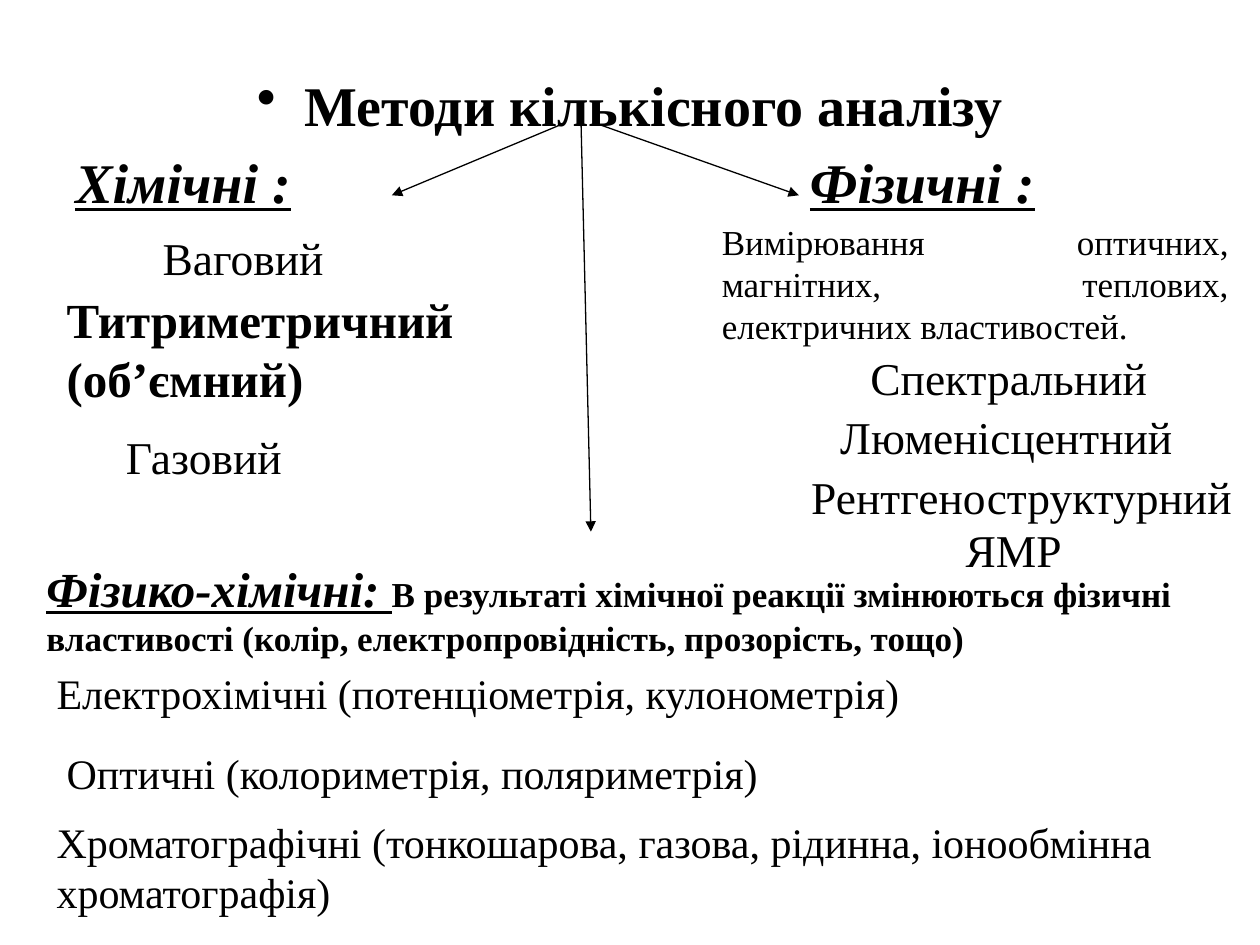
from lxml import etree
from pptx import Presentation
from pptx.dml.color import RGBColor
from pptx.enum import shapes, text
from pptx.oxml import ns
from pptx.util import Inches, Pt

COLORS = {"ink": "000000", "background": "FFFFFF"}
FONT = "Times New Roman"
ALIGN = text.PP_ALIGN
TITLE_ONLY = 5


class MethodsSlide:
    """Holds the style and the slide being built."""

    def __init__(self, presentation):
        self.slide = presentation.slides.add_slide(presentation.slide_layouts[TITLE_ONLY])
        self.ink = RGBColor.from_string(COLORS["ink"])
        fill = self.slide.background.fill
        fill.solid()
        fill.fore_color.rgb = RGBColor.from_string(COLORS["background"])

    def style(self, font, size, bold=False, italic=False, underline=False):
        font.name, font.size = FONT, Pt(size)
        font.bold, font.italic, font.underline = bold, italic, underline
        font.color.rgb = self.ink

    def title(self, words, left, top, width, height):
        """Fill the title placeholder as one centred, bulleted line."""
        shape = self.slide.shapes.title
        shape.left, shape.top = Inches(left), Inches(top)
        shape.width, shape.height = Inches(width), Inches(height)
        frame = shape.text_frame
        frame.text = words
        frame.vertical_anchor = text.MSO_ANCHOR.TOP
        frame.auto_size = text.MSO_AUTO_SIZE.NONE
        paragraph = frame.paragraphs[0]
        paragraph.alignment = ALIGN.CENTER
        paragraph.space_before = Pt(0)
        self.style(paragraph.font, 32, bold=True)
        properties = paragraph._p.get_or_add_pPr()
        properties.set("marL", str(Inches(0.38)))
        properties.set("indent", str(-Inches(0.38)))
        bullet = etree.Element(ns.qn("a:buChar"), char="•")
        properties.insert_element_before(bullet, "a:tabLst", "a:defRPr", "a:extLst")

    def label(self, words, left, top, width, height, size=26, align=ALIGN.LEFT, **emphasis):
        box = self.slide.shapes.add_textbox(
            Inches(left), Inches(top), Inches(width), Inches(height))
        frame = box.text_frame
        frame.word_wrap = True
        paragraph = frame.paragraphs[0]
        paragraph.alignment = align
        paragraph.add_run().text = words
        self.style(paragraph.font, size, **emphasis)
        return paragraph

    def lead_in(self, lead, words, left, top, width, height):
        """Add a bold statement that opens with a larger, underlined lead."""
        paragraph = self.label(lead, left, top, width, height, 20, bold=True)
        self.style(paragraph.runs[0].font, 28, bold=True, italic=True, underline=True)
        paragraph.add_run().text = words

    def arrow(self, *ends):
        line = self.slide.shapes.add_connector(
            shapes.MSO_CONNECTOR.STRAIGHT, *map(Inches, ends))
        line.line.color.rgb = self.ink
        line.line.width = Pt(0.75)
        etree.SubElement(line.line._get_or_add_ln(), ns.qn("a:tailEnd"), type="triangle")
        etree.SubElement(line._element.spPr, ns.qn("a:effectLst"))


def main():
    presentation = Presentation()
    presentation.slide_width, presentation.slide_height = Inches(10), Inches(7.5)
    methods = MethodsSlide(presentation)

    methods.title("Методи кількісного аналізу", 0.5, 0.51, 9, 0.62)
    for words, left in (("Хімічні :", 0.5), ("Фізичні :", 6.33)):
        methods.label(words, left, 1.12, 2.5, 0.62, 32,
                      bold=True, italic=True, underline=True)
    for ends in ((4.45, 0.99, 3.11, 1.55),
                 (4.76, 0.99, 6.34, 1.55),
                 (4.61, 0.91, 4.69, 4.22)):
        methods.arrow(*ends)

    # Chemical methods
    methods.label("Ваговий", 0.67, 1.78, 2.52, 0.53, align=ALIGN.CENTER)
    methods.label("Титриметричний (об’ємний)", 0.43, 2.25, 4.41, 1.03, 28, bold=True)
    methods.label("Газовий", 0.9, 3.36, 2.13, 0.53)

    # Physical methods
    methods.label("Вимірювання оптичних, магнітних, теплових, електричних властивостей.",
                  5.63, 1.7, 4.22, 1.1, 20, ALIGN.JUSTIFY)
    methods.label("Спектральний", 6.81, 2.73, 2.84, 0.53)
    methods.label("Люменісцентний", 6.57, 3.2, 3.43, 0.53)
    methods.label("Рентгеноструктурний", 6.34, 3.67, 3.66, 0.53)
    methods.label("ЯМР", 6.55, 4.09, 2.99, 0.53, align=ALIGN.CENTER)

    # Physicochemical methods
    methods.lead_in("Фізико-хімічні: ",
                    "В результаті хімічної реакції змінюються фізичні властивості "
                    "(колір, електропровідність, прозорість, тощо)",
                    0.27, 4.38, 9.53, 0.91)
    for words, left, top, width, height in (
            ("Електрохімічні (потенціометрія, кулонометрія)", 0.35, 5.25, 9.65, 0.5),
            ("Оптичні (колориметрія, поляриметрія)", 0.43, 5.88, 7.17, 0.5),
            ("Хроматографічні (тонкошарова, газова, рідинна, іонообмінна хроматографія)",
             0.35, 6.43, 9.45, 0.91)):
        methods.label(words, left, top, width, height, 24)

    presentation.save("out.pptx")


if __name__ == "__main__":
    main()
